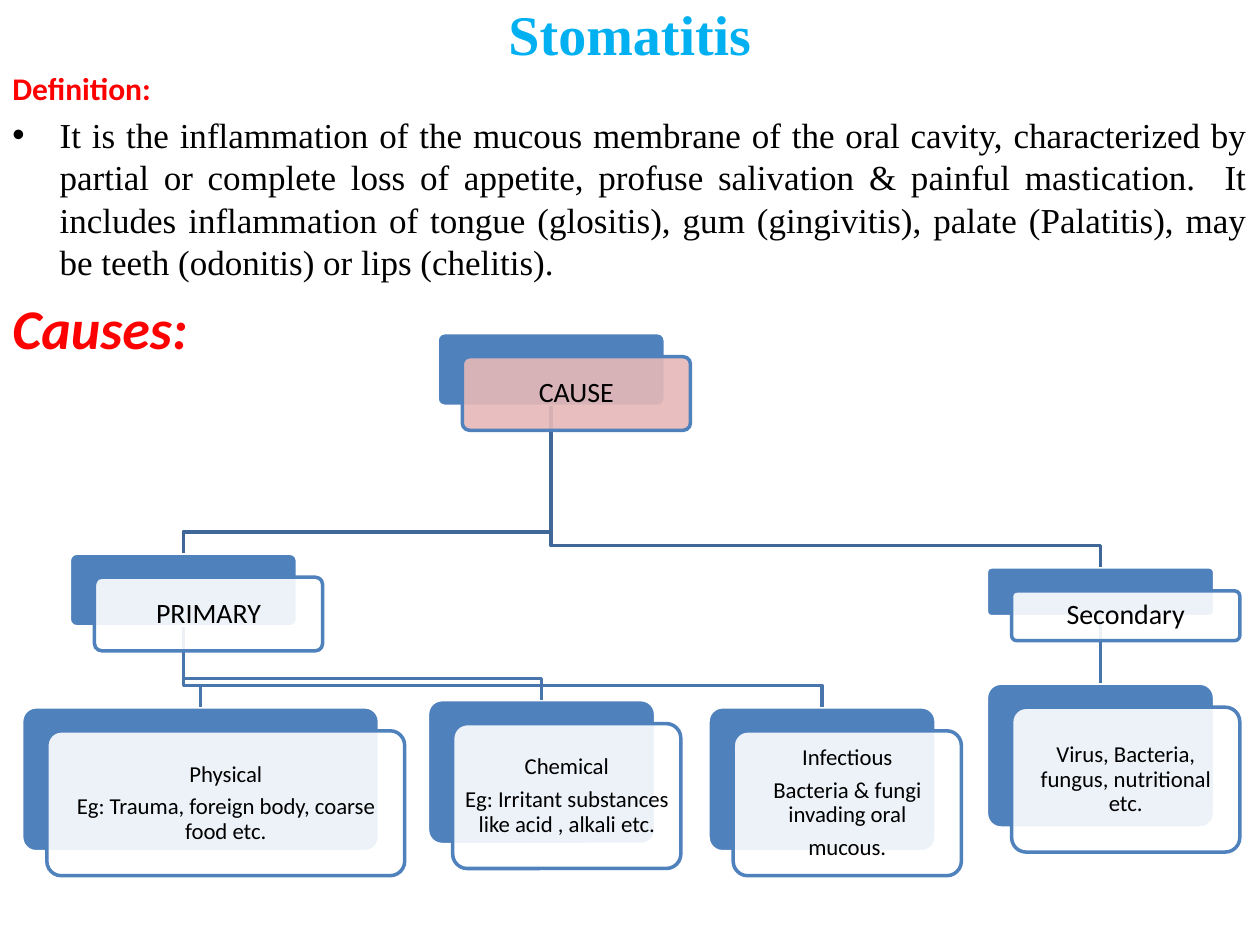
"""Build the Stomatitis slide with its definition and tree of causes."""
from dataclasses import dataclass

import pptx
import pptx.dml.color
import pptx.enum.shapes
import pptx.enum.text
import pptx.oxml
import pptx.oxml.ns
import pptx.util

Pt = pptx.util.Pt
ALIGN = pptx.enum.text.PP_ALIGN
ANCHOR = pptx.enum.text.MSO_ANCHOR
SHAPE = pptx.enum.shapes.MSO_SHAPE


@dataclass(frozen=True)
class Theme:
    """Colours, fonts, type sizes and card measures."""
    sans: str = "Calibri"
    serif: str = "Times New Roman"
    title: str = "00B0F0"
    heading: str = "FF0000"
    ink: str = "000000"
    white: str = "FFFFFF"
    card: str = "4F81BD"
    rose: str = "E6B9B8"
    root_link: str = "3F6797"
    branch_link: str = "4875AC"
    title_size: float = 32
    heading_size: float = 18
    body_size: float = 20
    branch_size: float = 16
    leaf_size: float = 13
    line_width: float = 2
    card_width: float = 130.4
    leaf_height: float = 82.8
    offset_x: float = 14.4
    offset_y: float = 13.7
    bend: float = 12.2


THEME = Theme()


@dataclass
class Node:
    """A card in the tree, with its place and its text."""
    lines: list
    left: float
    top: float
    width: float = THEME.card_width
    height: float = THEME.leaf_height
    size: float = THEME.leaf_size
    inset: float = 3.6
    fill: str = THEME.white
    back: object = None


def rgb(value):
    """Return a colour object for a hex value."""
    return pptx.dml.color.RGBColor.from_string(value)


def add_child(parent, tag, **attributes):
    """Append an XML element with attributes to its parent."""
    child = pptx.oxml.parse_xml(f"<{tag} {pptx.oxml.ns.nsdecls('a')}/>")
    for name, value in attributes.items():
        child.set(name, str(value))
    parent.append(child)


def write(frame, text, *, size, font=THEME.sans, color=THEME.ink, bold=False, italic=False,
          align=ALIGN.LEFT, before=0, after=0, spacing=1.0, bullet_indent=0):
    """Write one formatted paragraph in a text frame."""
    paragraph = frame.paragraphs[0] if not frame.text else frame.add_paragraph()
    if bullet_indent:
        properties = paragraph._p.get_or_add_pPr()
        properties.set("marL", str(Pt(bullet_indent)))
        properties.set("indent", str(-Pt(bullet_indent)))
        add_child(properties, "a:buFont", typeface="Arial")
        add_child(properties, "a:buChar", char="•")
    paragraph.alignment = align
    paragraph.space_before, paragraph.space_after = Pt(before), Pt(after)
    paragraph.line_spacing = spacing
    run = paragraph.add_run()
    run.text = text
    run.font.name, run.font.size = font, Pt(size)
    run.font.bold, run.font.italic = bold, italic
    run.font.color.rgb = rgb(color)


def add_text_box(slide, left, top, width, height, anchor):
    """Add a wrapping text box and return its frame."""
    frame = slide.shapes.add_textbox(Pt(left), Pt(top), Pt(width), Pt(height)).text_frame
    frame.word_wrap = True
    frame.vertical_anchor = anchor
    return frame


def add_card(slide, left, top, node, fill, line):
    """Add a rounded rectangle of the size of a node."""
    shape = slide.shapes.add_shape(SHAPE.ROUNDED_RECTANGLE, Pt(left), Pt(top),
                                   Pt(node.width), Pt(node.height))
    shape.adjustments[0] = 0.1
    shape.shadow.inherit = False
    shape.fill.solid()
    shape.fill.fore_color.rgb = rgb(fill)
    shape.line.color.rgb = rgb(line)
    shape.line.width = Pt(THEME.line_width)
    return shape


def add_front(slide, node):
    """Add the translucent front card that holds the text of a node."""
    shape = add_card(slide, node.left + THEME.offset_x, node.top + THEME.offset_y,
                     node, node.fill, THEME.card)
    color = shape._element.spPr.find(".//" + pptx.oxml.ns.qn("a:srgbClr"))
    add_child(color, "a:alpha", val=90000)
    frame = shape.text_frame
    frame.word_wrap = True
    frame.vertical_anchor = ANCHOR.MIDDLE
    frame.margin_left = frame.margin_right = Pt(node.inset)
    frame.margin_top = frame.margin_bottom = Pt(node.inset)
    for line in node.lines:
        write(frame, line, size=node.size, align=ALIGN.CENTER,
              after=0.35 * node.size, spacing=0.9)


def add_link(slide, parent, child, color):
    """Join a parent card to a child card with a straight or bent line."""
    start_x, end_x = (node.left + node.width / 2 for node in (parent, child))
    start_y, bend_y = parent.top + parent.height, child.top - THEME.bend
    if start_x == end_x:
        link = slide.shapes.add_connector(pptx.enum.shapes.MSO_CONNECTOR.STRAIGHT,
                                          Pt(start_x), Pt(start_y), Pt(end_x), Pt(child.top))
        link.begin_connect(parent.back, 2)
        link.end_connect(child.back, 0)
        add_child(link._element.spPr, "a:effectLst")
    else:
        builder = slide.shapes.build_freeform(Pt(start_x), Pt(start_y))
        corners = [(start_x, bend_y), (end_x, bend_y), (end_x, child.top)]
        builder.add_line_segments([(Pt(x), Pt(y)) for x, y in corners], close=False)
        link = builder.convert_to_shape()
        link.fill.background()
        link.shadow.inherit = False
    link.line.color.rgb = rgb(color)
    link.line.width = Pt(THEME.line_width)


def add_tree(slide):
    """Add the tree of causes: back cards, links, then front cards."""
    branch = {"size": THEME.branch_size, "inset": 4.8}
    cause = Node(["CAUSE"], 249.8, 190.1, height=42.1, fill=THEME.rose, **branch)
    primary = Node(["PRIMARY"], 39.6, 316.1, height=42.1, **branch)
    secondary = Node(["Secondary"], 563.7, 324, height=28.4, **branch)
    physical = Node(["Physical", "Eg: Trauma, foreign body, coarse food etc."],
                    12.4, 403.9, width=204.5)
    chemical = Node(["Chemical", "Eg: Irritant substances like acid , alkali etc."], 244.3, 399.8)
    infectious = Node(["Infectious", "Bacteria & fungi invading oral", "mucous."], 404.6, 403.9)
    agents = Node(["Virus, Bacteria, fungus, nutritional etc."], 563.7, 390.4)
    nodes = [cause, primary, physical, chemical, infectious, secondary, agents]
    for node in nodes:
        node.back = add_card(slide, node.left, node.top, node, THEME.card, THEME.white)
    for parent, children, color in [(cause, [primary, secondary], THEME.root_link),
                                    (primary, [physical, chemical, infectious], THEME.branch_link),
                                    (secondary, [agents], THEME.branch_link)]:
        for child in children:
            add_link(slide, parent, child, color)
    for node in nodes:
        add_front(slide, node)


def main():
    """Build the slide and save it."""
    presentation = pptx.Presentation()
    presentation.slide_width, presentation.slide_height = Pt(720), Pt(540)
    slide = presentation.slides.add_slide(presentation.slide_layouts[6])
    title = add_text_box(slide, 0, 0, 720, 38.2, ANCHOR.MIDDLE)
    write(title, "Stomatitis", size=THEME.title_size, font=THEME.serif, color=THEME.title,
          bold=True, align=ALIGN.CENTER)
    body = add_text_box(slide, 0, 36, 720, 504, ANCHOR.TOP)
    write(body, "Definition:", size=THEME.heading_size, color=THEME.heading, bold=True)
    write(body, "It is the inflammation of the mucous membrane of the oral cavity, characterized by "
          "partial or complete loss of appetite, profuse salivation & painful mastication.  It "
          "includes inflammation of tongue (glositis), gum (gingivitis), palate (Palatitis), may "
          "be teeth (odonitis) or lips (chelitis). ", size=THEME.body_size, font=THEME.serif,
          align=ALIGN.JUSTIFY, before=0.2 * THEME.body_size, bullet_indent=27)
    write(body, "Causes:", size=THEME.title_size, color=THEME.heading, bold=True, italic=True,
          before=0.2 * THEME.title_size)
    add_tree(slide)
    presentation.save("out.pptx")


if __name__ == "__main__":
    main()
